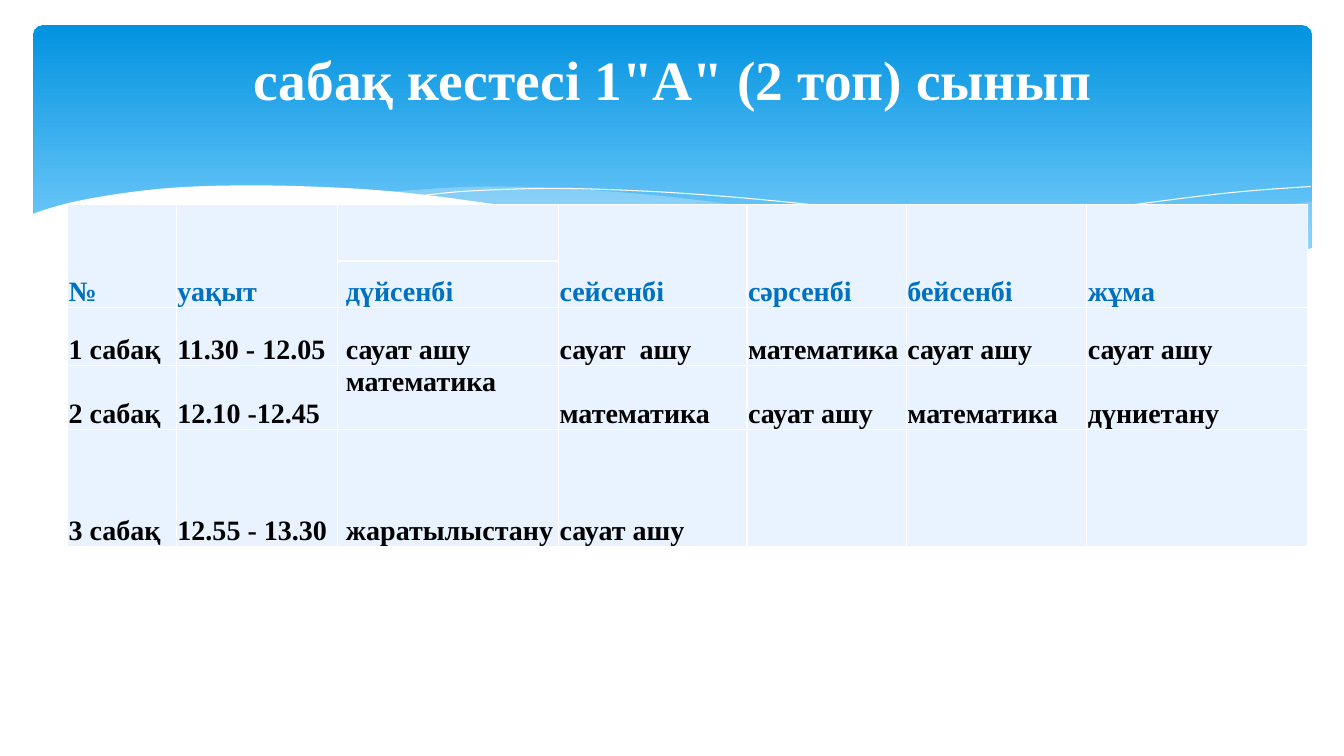
import pptx
import pptx.dml.color
import pptx.enum.shapes
import pptx.enum.text
import pptx.oxml
import pptx.oxml.ns
import pptx.util

Inches = pptx.util.Inches
Pt = pptx.util.Pt
RGBColor = pptx.dml.color.RGBColor
Anchor = pptx.enum.text.MSO_ANCHOR

WHITE = RGBColor(0xFF, 0xFF, 0xFF)
BLACK = RGBColor(0, 0, 0)
HEADER_BLUE = RGBColor(0x00, 0x70, 0xC0)
BAND_TOP = RGBColor(0x02, 0x93, 0xE0)
BAND_BOTTOM = RGBColor(0x83, 0xD3, 0xFE)
WAVE_BLUE = RGBColor(0xC6, 0xE7, 0xFC)
CELL_BLUE = RGBColor(0xE8, 0xF3, 0xFF)

RIGHT_WAVE = [
    [(13.01, 2), (12.46, 2.07), (11.47, 2.23), (10.38, 2.42), (9.41, 2.57), (8.82, 2.65)],
    [(8.82, 2.65), (9.58, 2.72), (10.25, 2.77), (10.99, 2.77), (11.74, 2.73), (12.38, 2.63), (13.01, 2.47)],
]
MIDDLE_WAVE = [
    [(11.9, 2.73), (10.76, 2.6), (9.41, 2.4), (8.39, 2.22), (7.4, 2.05), (6.52, 1.94),
     (5.6, 1.87), (4.82, 1.85), (4.18, 1.88), (3.82, 1.91)],
    [(3.82, 1.91), (4.83, 2.03), (5.99, 2.22), (7.06, 2.4), (8.24, 2.58), (9.26, 2.7),
     (10.14, 2.77), (11.04, 2.78), (11.9, 2.73)],
]
LONG_LINE = [[(4.12, 1.95), (4.58, 1.9), (5.35, 1.87), (6, 1.88), (6.8, 1.92), (7.75, 2),
              (8.86, 2.13), (10.14, 2.33), (11.08, 2.51), (12.1, 2.72)]]
RIGHT_LINE = [[(8.18, 2.57), (9.27, 2.35), (10.35, 2.16), (11.55, 1.99), (12.32, 1.9), (13, 1.85)]]
WHITE_WAVE = [
    [(13.02, 2.46), (12.4, 2.62), (11.67, 2.73), (10.78, 2.77), (9.92, 2.74), (8.91, 2.65),
     (7.72, 2.5), (6.71, 2.33), (5.96, 2.2), (4.86, 2.02), (3.9, 1.9), (3.06, 1.85), (2.35, 1.84),
     (1.76, 1.86), (1.27, 1.91), (0.79, 1.99), (0.48, 2.07), (0.31, 2.13)],
    [(0.31, 3.29), (13.02, 3.29)],
]

COLUMN_WIDTHS = [1.08, 1.6, 2.19, 1.87, 1.58, 1.79, 2.19]
ROW_HEIGHTS = [0.56, 0.46, 0.58, 0.63, 1.16]
MONDAY = 2
TIMETABLE = [
    ["№", "уақыт", "", "сейсенбі", "сәрсенбі", "бейсенбі", "жұма"],
    ["", "", "дүйсенбі", "", "", "", ""],
    ["1 сабақ", "11.30 - 12.05", "сауат ашу", "сауат  ашу", "математика", "сауат ашу", "сауат ашу"],
    ["2 сабақ", "12.10 -12.45", "математика", "математика", "сауат ашу", "математика", "дүниетану"],
    ["3 сабақ", "12.55 - 13.30", "жаратылыстану", "сауат ашу", "", "", ""],
]


def smooth(points, steps=5):
    """Return points along a Catmull-Rom curve through the given points."""
    padded = [points[0], *points, points[-1]]
    curve = [points[0]]
    for a, b, c, d in zip(padded, padded[1:], padded[2:], padded[3:]):
        for step in range(1, steps + 1):
            t = step / steps
            curve.append(tuple(
                0.5 * (2 * q + (r - p) * t + (2 * p - 5 * q + 4 * r - s) * t ** 2
                       + (3 * q - p - 3 * r + s) * t ** 3)
                for p, q, r, s in zip(a, b, c, d)))
    return curve


class TimetableSlide:
    """Draws the elements of a timetable slide in one style."""

    font_name = "Times New Roman"

    def __init__(self, presentation):
        self.slide = presentation.slides.add_slide(presentation.slide_layouts[5])
        self.shapes = self.slide.shapes

    def style_text(self, paragraph, size, color):
        for run in paragraph.runs:
            run.font.name = self.font_name
            run.font.size = Pt(size)
            run.font.bold = True
            run.font.color.rgb = color

    def band(self, left, top, width, height):
        shape = self.shapes.add_shape(
            pptx.enum.shapes.MSO_SHAPE.ROUNDED_RECTANGLE,
            Inches(left), Inches(top), Inches(width), Inches(height))
        shape.adjustments[0] = 0.034
        shape.shadow.inherit = False
        shape.line.fill.background()
        shape.fill.gradient()
        shape.fill.gradient_angle = 270
        for stop, color, position in zip(shape.fill.gradient_stops, (BAND_TOP, BAND_BOTTOM), (0, 0.9)):
            stop.color.rgb = color
            stop.position = position

    def wave(self, curves, fill=None, opacity=100):
        points = [(Inches(x), Inches(y)) for curve in curves for x, y in smooth(curve)]
        builder = self.shapes.build_freeform(*points[0], scale=1.0)
        builder.add_line_segments(points[1:], close=fill is not None)
        shape = builder.convert_to_shape()
        shape.shadow.inherit = False
        if fill is None:
            shape.fill.background()
            shape.line.color.rgb = WHITE
            shape.line.width = Pt(0)
            return
        shape.line.fill.background()
        shape.fill.solid()
        shape.fill.fore_color.rgb = fill
        if opacity < 100:
            color = shape.element.spPr.find(".//" + pptx.oxml.ns.qn("a:srgbClr"))
            color.append(pptx.oxml.parse_xml(
                f'<a:alpha {pptx.oxml.ns.nsdecls("a")} val="{opacity * 1000}"/>'))

    def cell(self, cell, text, color, indent, anchor):
        cell.fill.solid()
        cell.fill.fore_color.rgb = CELL_BLUE
        cell.vertical_anchor = anchor
        cell.margin_left = Inches(indent)
        cell.margin_top = cell.margin_right = Inches(0.01)
        cell.margin_bottom = 0
        cell.text_frame.text = text
        self.style_text(cell.text_frame.paragraphs[0], 20, color)
        properties = cell._tc.get_or_add_tcPr()
        for index, side in enumerate("LRTB"):
            properties.insert(index, pptx.oxml.parse_xml(
                f'<a:ln{side} {pptx.oxml.ns.nsdecls("a")} w="{Pt(1)}">'
                f'<a:solidFill><a:srgbClr val="{WHITE}"/></a:solidFill></a:ln{side}>'))

    def timetable(self, left, top):
        frame = self.shapes.add_table(
            len(ROW_HEIGHTS), len(COLUMN_WIDTHS), Inches(left), Inches(top),
            Inches(sum(COLUMN_WIDTHS)), Inches(sum(ROW_HEIGHTS)))
        table = frame.table
        table.first_row = table.horz_banding = False
        for row, height in zip(table.rows, ROW_HEIGHTS):
            row.height = Inches(height)
        for index, width in enumerate(COLUMN_WIDTHS):
            table.columns[index].width = Inches(width)
            if index != MONDAY:
                table.cell(0, index).merge(table.cell(1, index))
        for row, texts in enumerate(TIMETABLE):
            for column, text in enumerate(texts):
                self.cell(
                    table.cell(row, column), text,
                    HEADER_BLUE if row < 2 else BLACK,
                    0.08 if column == MONDAY else 0.01,
                    Anchor.TOP if (row, column) == (3, MONDAY) else Anchor.BOTTOM)

    def title(self, text, left, top, width, height):
        shape = self.shapes.title
        shape.left, shape.top = Inches(left), Inches(top)
        shape.width, shape.height = Inches(width), Inches(height)
        frame = shape.text_frame
        frame.text = text
        frame.word_wrap = True
        frame.vertical_anchor = Anchor.TOP
        frame.margin_top = Inches(0.08)
        frame.paragraphs[0].alignment = pptx.enum.text.PP_ALIGN.CENTER
        self.style_text(frame.paragraphs[0], 39.6, WHITE)
        shape.element.getparent().append(shape.element)


def main():
    presentation = pptx.Presentation()
    presentation.slide_width = Inches(13.33)
    presentation.slide_height = Inches(7.5)
    page = TimetableSlide(presentation)
    page.band(0.33, 0.25, 12.68, 2.7)
    page.wave(RIGHT_WAVE, WAVE_BLUE, 29)
    page.wave(MIDDLE_WAVE, WAVE_BLUE, 40)
    page.wave(LONG_LINE)
    page.wave(RIGHT_LINE)
    page.wave(WHITE_WAVE, WHITE)
    page.timetable(0.67, 2.03)
    page.title('сабақ кестесі 1"А" (2 топ) сынып', 0.67, 0.37, 12, 1.37)
    presentation.save("out.pptx")


if __name__ == "__main__":
    main()
